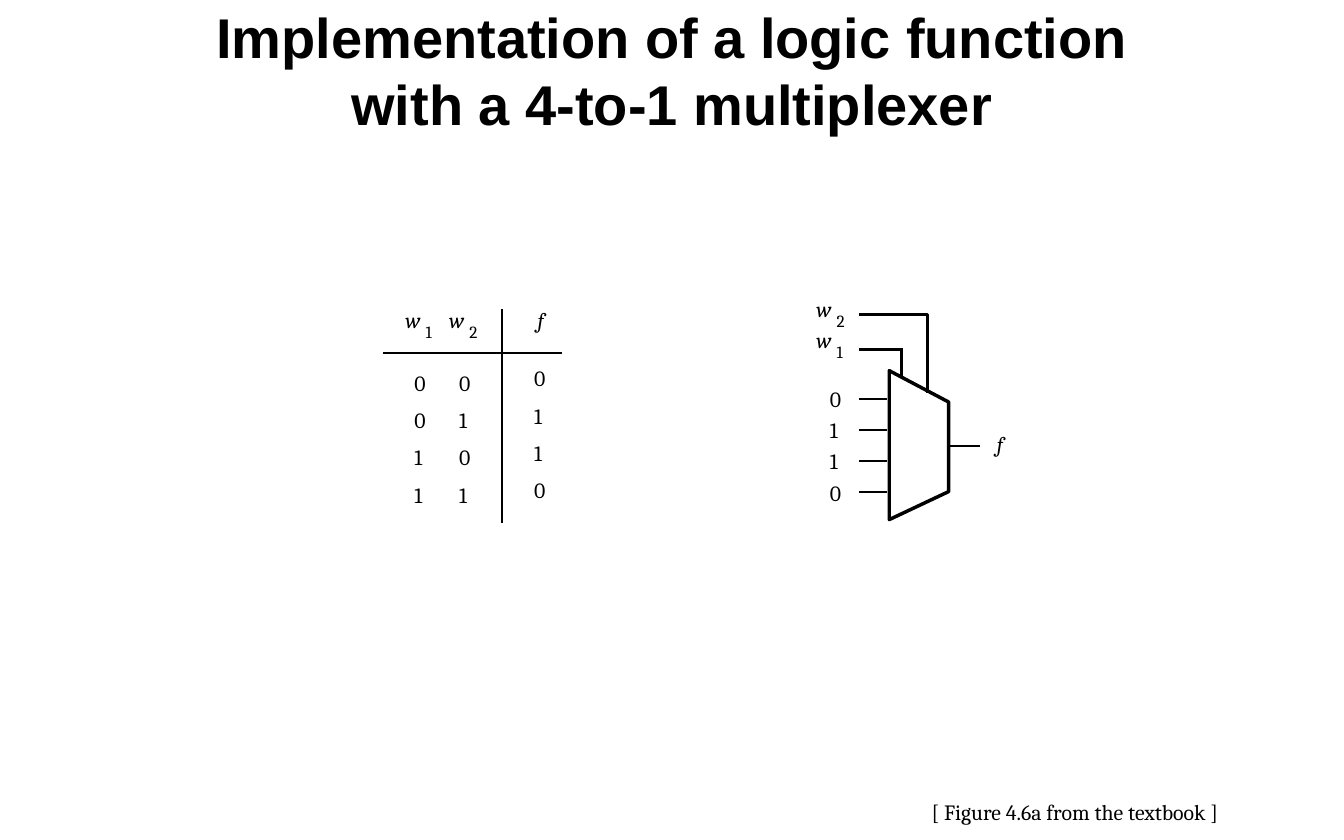
from dataclasses import dataclass

from lxml import etree
from pptx import Presentation
from pptx.dml.color import RGBColor
from pptx.enum.shapes import MSO_CONNECTOR
from pptx.enum.text import MSO_ANCHOR, MSO_AUTO_SIZE, PP_ALIGN
from pptx.oxml.ns import qn
from pptx.util import Inches, Pt

STRAIGHT = MSO_CONNECTOR.STRAIGHT
MIDDLE = MSO_ANCHOR.MIDDLE
CENTER = PP_ALIGN.CENTER
NO_AUTO_SIZE = MSO_AUTO_SIZE.NONE
GROW = MSO_AUTO_SIZE.SHAPE_TO_FIT_TEXT
TITLE_ONLY = 5

# The slide is a grid of 120 columns by 75 rows.
COLUMNS, ROWS = 120, 75
SLIDE_WIDTH, SLIDE_HEIGHT = Inches(12), Inches(7.5)

TRUTH_TABLE = [("0", "0", "0"), ("0", "1", "1"), ("1", "0", "1"), ("1", "1", "0")]


@dataclass(frozen=True)
class Theme:
    ink: RGBColor = RGBColor(0, 0, 0)
    heading_font: str = "Arial"
    text_font: str = "Cambria"
    title_size: float = 36
    text_size: float = 14
    subscript_size: float = 11
    wire: float = 1.5
    outline: float = 2.25


def write_text(paragraph, text, *, font, size, color, bold=False, italic=False, align=None):
    """Fill a paragraph with formatted text, one line break per newline."""
    paragraph.alignment = align
    for index, line in enumerate(text.split("\n")):
        if index:
            paragraph.add_line_break()
        run = paragraph.add_run()
        run.text = line
        run.font.name = font
        run.font.size = Pt(size)
        run.font.color.rgb = color
        run.font.bold = bold
        run.font.italic = italic


def x(columns):
    return round(SLIDE_WIDTH * columns / COLUMNS)


def y(rows):
    return round(SLIDE_HEIGHT * rows / ROWS)


class Diagram:
    def __init__(self, slide, theme):
        self.slide = slide
        self.theme = theme

    def title(self, text, left, top, width, height):
        shape = self.slide.shapes.title
        shape.left, shape.top, shape.width, shape.height = x(left), y(top), x(width), y(height)
        frame = shape.text_frame
        frame.word_wrap = True
        frame.auto_size = NO_AUTO_SIZE
        frame.vertical_anchor = MIDDLE
        write_text(frame.paragraphs[0], text, font=self.theme.heading_font,
                   size=self.theme.title_size, color=self.theme.ink, bold=True, align=CENTER)

    def text(self, text, left, top, width, height=2.4, *, size=None, italic=False, inset=True):
        box = self.slide.shapes.add_textbox(x(left), y(top), x(width), y(height))
        frame = box.text_frame
        frame.word_wrap = False
        frame.auto_size = GROW
        if not inset:
            frame.margin_left = frame.margin_right = 0
            frame.margin_top = frame.margin_bottom = 0
        write_text(frame.paragraphs[0], text, font=self.theme.text_font,
                   size=size or self.theme.text_size, color=self.theme.ink, italic=italic)

    def digit(self, text, left, top):
        self.text(text, left, top, 1.5, inset=False)

    def function_name(self, left, top):
        self.text("f", left, top, 1.1, italic=True, inset=False)

    def variable(self, subscript, left, top):
        self.text("w", left, top, 1.9, italic=True, inset=False)
        self.text(subscript, left + 1.8, top + 1.3, 1.1, 1.8,
                  size=self.theme.subscript_size, inset=False)

    def line(self, start, end):
        connector = self.slide.shapes.add_connector(
            STRAIGHT, x(start[0]), y(start[1]), x(end[0]), y(end[1]))
        connector.line.color.rgb = self.theme.ink
        connector.line.width = Pt(self.theme.wire)
        etree.SubElement(connector._element.spPr, qn("a:effectLst"))

    def outline(self, points, *, width, close):
        start, *others = [(x(column), y(row)) for column, row in points]
        builder = self.slide.shapes.build_freeform(*start)
        builder.add_line_segments(others, close=close)
        shape = builder.convert_to_shape()
        shape.shadow.inherit = False
        shape.fill.background()
        shape.line.color.rgb = self.theme.ink
        shape.line.width = Pt(width)


def draw_truth_table(diagram):
    header_row, row_step = 27.4, 10 / 3
    diagram.variable("1", 36.2, header_row)
    diagram.variable("2", 40.1, header_row)
    diagram.function_name(48, header_row)
    for index, (w1, w2, f) in enumerate(TRUTH_TABLE):
        row = 33 + index * row_step
        diagram.digit(w1, 37, row)
        diagram.digit(w2, 41, row)
        diagram.digit(f, 47.7, row - 0.4)
    diagram.line((34.2, 31.5), (50.2, 31.5))
    diagram.line((44.8, 27.6), (44.8, 46.7))


def draw_multiplexer(diagram):
    wire_start, body_left, body_right = 76.7, 79.4, 84.7
    diagram.outline([(body_right, 43.9), (body_right, 35.9), (body_left, 33.1), (body_left, 46.4)],
                    width=diagram.theme.outline, close=True)
    for index, (_, _, f) in enumerate(TRUTH_TABLE):
        diagram.digit(f, 74.1, 34.4 + index * 2.8)
        wire_row = 35.6 + index * 2.77
        diagram.line((wire_start, wire_row), (body_left - 0.2, wire_row))

    diagram.variable("2", 72.9, 26.4)
    diagram.outline([(wire_start, 28.1), (82.8, 28.1), (82.8, 35.1)],
                    width=diagram.theme.wire, close=False)
    diagram.variable("1", 72.9, 29.2)
    diagram.line((wire_start, 31.2), (80.6, 31.2))
    diagram.line((80.5, 31.1), (80.5, 33.6))

    diagram.line((body_right, 39.8), (87.5, 39.8))
    diagram.function_name(89, 38.5)


def main():
    presentation = Presentation()
    presentation.slide_width, presentation.slide_height = SLIDE_WIDTH, SLIDE_HEIGHT
    slide = presentation.slides.add_slide(presentation.slide_layouts[TITLE_ONLY])
    diagram = Diagram(slide, Theme())
    diagram.title("Implementation of a logic function\nwith a 4-to-1 multiplexer", 10, 0, 100, 12.5)
    draw_truth_table(diagram)
    draw_multiplexer(diagram)
    diagram.text("[ Figure 4.6a from the textbook ]", 82.2, 70.8, 27.8, 3.4)
    presentation.save("out.pptx")


if __name__ == "__main__":
    main()
